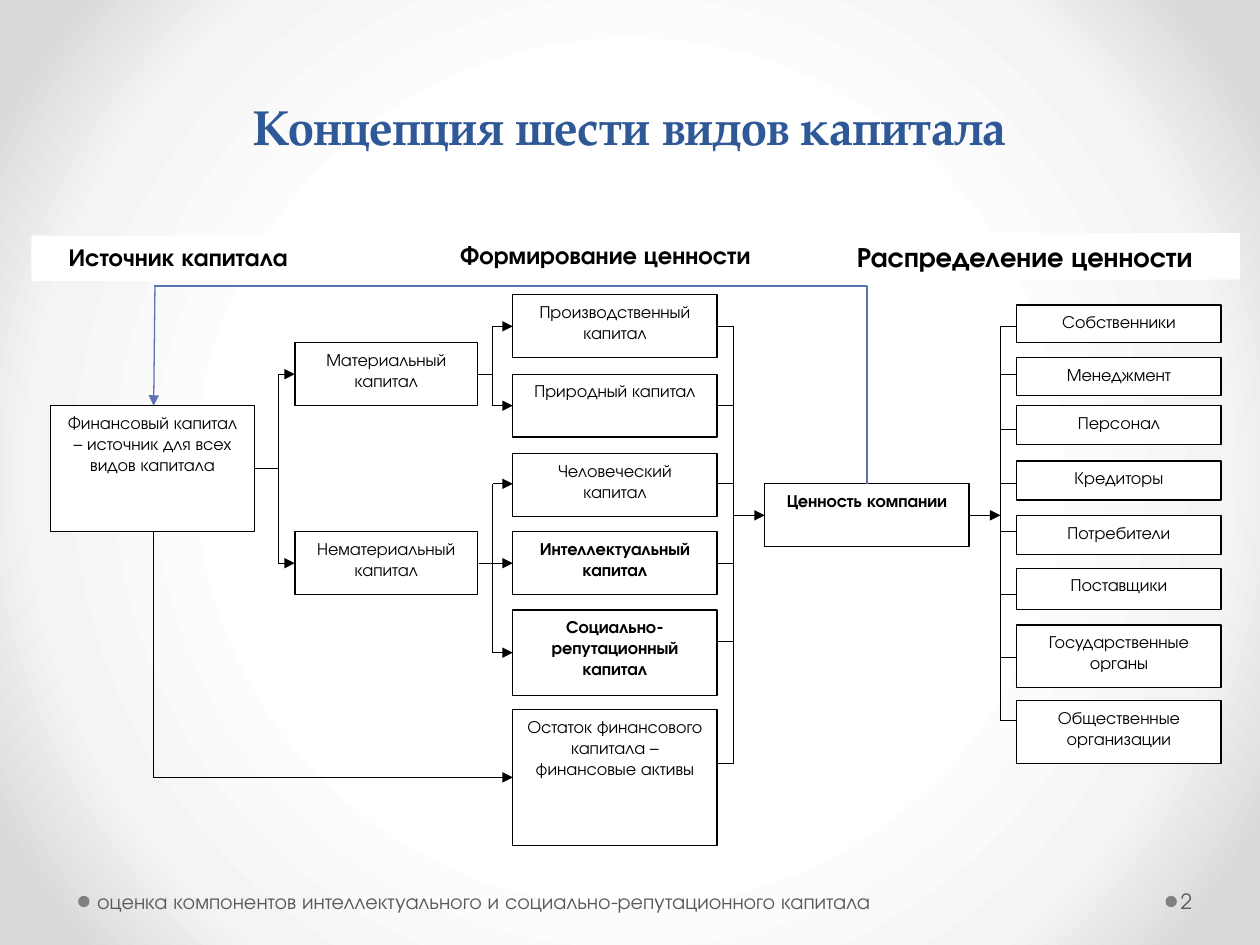
from lxml import etree
from pptx import Presentation
from pptx.dml.color import RGBColor
from pptx.enum import shapes, text
from pptx.oxml import ns
from pptx.util import Pt

PX = 9144
BODY, HEAD = "TeX Gyre Adventor", "TeX Gyre Pagella"
COLORS = {"ink": "000000", "card": "FFFFFF", "title": "2F5897", "loop": "5C72B2",
          "footer": "595959", "dot": "808080"}
GRADIENT = [(50, "FFFFFF"), (76, "F4F4F4"), (92, "DADADA")]


def rgb(name):
    return RGBColor.from_string(COLORS[name])


def emu(*lengths):
    return [round(n * PX) for n in lengths]


def sub(parent, tag, **attrs):
    return etree.SubElement(parent, ns.qn(tag), attrs)


def write(sp, words, size, color="ink", bold=False, font=BODY,
          align=text.PP_ALIGN.CENTER, anchor=text.MSO_ANCHOR.TOP):
    tf = sp.text_frame
    tf.word_wrap = True
    tf.vertical_anchor = anchor
    p = tf.paragraphs[0]
    p.text = words
    p.alignment = align
    p.font.name, p.font.size, p.font.bold = font, Pt(size), bold
    p.font.color.rgb = rgb(color)
    return tf


def shape(s, kind, box, fill):
    sp = s.shapes.add_shape(kind, *emu(*box))
    sp.shadow.inherit = False
    sp.fill.solid()
    sp.fill.fore_color.rgb = rgb(fill)
    sp.line.fill.background()
    return sp


def card(s, box, words, size=10, bold=False, border=True):
    sp = shape(s, shapes.MSO_SHAPE.RECTANGLE, box, "card")
    if border:
        sp.line.color.rgb = rgb("ink")
        sp.line.width = Pt(0.75)
    write(sp, words, size, bold=bold)


def line(s, x1, y1, x2, y2, arrow=False, color="ink"):
    c = s.shapes.add_connector(shapes.MSO_CONNECTOR.STRAIGHT, *emu(x1, y1, x2, y2))
    c.line.color.rgb = rgb(color)
    c.line.width = Pt(0.75)
    if arrow:
        sub(c.line._get_or_add_ln(), "a:tailEnd", type="triangle")
    sub(c._element.spPr, "a:effectLst")
    return c


def elbow(s, x1, y1, x2, y2, arrow=False, color="ink"):
    cx, cy = (x1 + x2) / 2, (y1 + y2) / 2
    dx, dy = (x2 - x1) / 2, (y2 - y1) / 2
    c = line(s, cx + dy, cy - dx, cx - dy, cy + dx, arrow, color)
    c._element.spPr.find(ns.qn("a:prstGeom")).set("prst", "bentConnector2")
    c._element.spPr.find(ns.qn("a:xfrm")).set("rot", "16200000")


def background(s):
    fill = s.background.fill
    fill.gradient()
    grad = s._element.find(".//" + ns.qn("a:gradFill"))
    for child in list(grad):
        grad.remove(child)
    stops = sub(grad, "a:gsLst")
    for pos, color in GRADIENT:
        sub(sub(stops, "a:gs", pos=str(pos * 1000)), "a:srgbClr", val=color)
    sub(sub(grad, "a:path", path="circle"), "a:fillToRect",
        l="50000", t="50000", r="50000", b="50000")


def title(s, x, y, w, h):
    sp = s.shapes.add_textbox(*emu(x, y, w, h))
    tf = write(sp, "Концепция шести видов капитала", 28, "title", True, HEAD,
               anchor=text.MSO_ANCHOR.BOTTOM)
    tf.paragraphs[0].line_spacing = Pt(58)


def headings(s, x, y):
    for dx, dy, w, h, words, size in [
            (294, 1, 323, 36, "Формирование ценности", 14),
            (618, 0, 341, 37, "Распределение ценности", 16),
            (0, 2, 233, 36, "Источник капитала", 14)]:
        card(s, (x + dx, y + dy, w, h), words, size, True, False)


def sources(s, x, y):
    card(s, (x, y + 50, 162, 100), "Финансовый капитал – источник для всех видов капитала")
    bus = x + 181
    line(s, x + 162, y + 100, bus, y + 100)
    line(s, bus, y + 25, bus, y + 175)
    for dy, words in [(0, "Материальный капитал"), (150, "Нематериальный капитал")]:
        card(s, (x + 194, y + dy, 145, 50), words)
        line(s, bus, y + dy + 25, x + 194, y + dy + 25, True)


def capitals(s, x, y):
    left, right, bus = x + 16, x + 178, x + 191
    for dy, h, tick, words, bold in [
            (0, 50, 25, "Производственный капитал", False),
            (63, 50, 88, "Природный капитал", False),
            (126, 50, 150, "Человеческий капитал", False),
            (188, 50, 213, "Интеллектуальный капитал", True),
            (250, 68, 275, "Социально-репутационный капитал", True),
            (329, 108, 372, "Остаток финансового капитала – финансовые активы", False)]:
        card(s, (left, y + dy, 162, h), words, bold=bold)
        line(s, right, y + tick, bus, y + tick)
    line(s, bus, y + 25, bus, y + 372)
    line(s, x - 12, y + 63, x, y + 63)
    for top, bottom in [(25, 88), (150, 284)]:
        line(s, x, y + top, x, y + bottom)
        for dy in (top, bottom):
            line(s, x, y + dy, left, y + dy, True)
    line(s, x - 11, y + 213, left, y + 213, True)


def company_value(s, x, y):
    line(s, x, y + 25, x + 25, y + 25, True)
    card(s, (x + 25, y, 162, 50), "Ценность компании", bold=True)
    line(s, x + 187, y + 25, x + 212, y + 25, True)


def recipients(s, x, y):
    for dy, h, tick, words in [
            (0, 30, 17, "Собственники"), (42, 30, 55, "Менеджмент"),
            (80, 31, 99, "Персонал"), (124, 31, 142, "Кредиторы"),
            (167, 31, 180, "Потребители"), (209, 33, 230, "Поставщики"),
            (254, 50, 280, "Государственные органы"),
            (314, 50, 330, "Общественные организации")]:
        card(s, (x + 13, y + dy, 162, h), words)
        line(s, x, y + tick, x + 13, y + tick)
    line(s, x, y + 17, x, y + 330)


def feedback(s, x, y):
    elbow(s, x, y + 195, x + 285, y + 390, True)
    elbow(s, x + 566, y + 157, x, y, color="loop")
    line(s, x + 1, y, x, y + 95, True, "loop")


def footer(s, x, y):
    for dot, left, w, inset, end, words in [
            (0, 10, 798, 5, 10, "оценка компонентов интеллектуального и социально-репутационного капитала"),
            (863, 872, 61, 3, 5, "2")]:
        shape(s, shapes.MSO_SHAPE.OVAL, (x + dot, y + 16, 9, 9), "dot")
        sp = s.shapes.add_textbox(*emu(x + left, y, w, 40))
        tf = write(sp, words, 12, "footer", align=text.PP_ALIGN.LEFT,
                   anchor=text.MSO_ANCHOR.MIDDLE)
        tf.margin_left, tf.margin_right = emu(inset, end)


def main():
    prs = Presentation()
    prs.slide_width, prs.slide_height = emu(1000, 750)
    s = prs.slides.add_slide(prs.slide_layouts[6])
    background(s)
    title(s, 50, 45, 900, 83)
    headings(s, 25, 185)
    sources(s, 40, 272)
    capitals(s, 391, 234)
    company_value(s, 582, 384)
    recipients(s, 794, 242)
    feedback(s, 122, 227)
    footer(s, 62, 695)
    prs.save("out.pptx")


if __name__ == "__main__":
    main()
